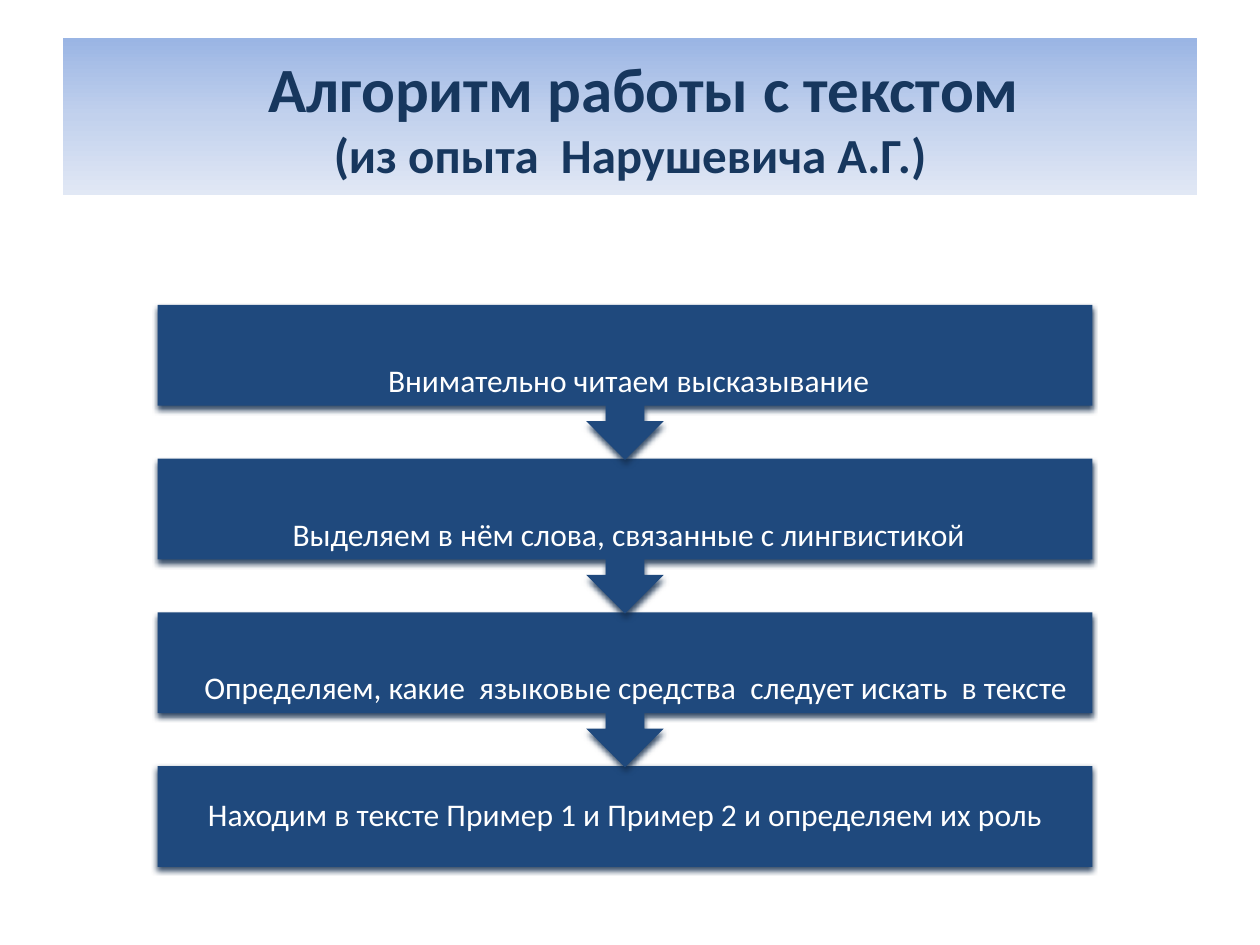
import pptx
import pptx.dml.color
import pptx.enum.dml
import pptx.enum.shapes
import pptx.enum.text
import pptx.oxml
import pptx.oxml.ns
import pptx.util
import copy

SHAPES = pptx.enum.shapes.MSO_SHAPE
STEPS = [
    # wording, first-line indent in grid cells
    ("Внимательно читаем высказывание", 0.6),
    ("Выделяем в нём слова, связанные с лингвистикой", 0.6),
    ("Определяем, какие  языковые средства  следует искать  в тексте", 1.7),
    ("Находим в тексте Пример 1 и Пример 2 и определяем их роль", 0),
]
LEFT, WIDTH, TOP = 12.5, 74.2, 24.2
PITCH, CALLOUT_HEIGHT, BOX_HEIGHT = 12.2, 12.3, 8


def color(hex_value):
    return pptx.dml.color.RGBColor.from_string(hex_value)


def cells(count):
    """Length of grid cells: the slide is 100 columns by 75 rows."""
    return pptx.util.Inches(count / 10)


class SlideBuilder:
    font = "Calibri"
    navy, white, title_color = "1F497D", "FFFFFF", "17375E"
    title_gradient = [(0, "9AB5E4"), (0.5, "C2D1ED"), (1, "E1E8F5")]

    def __init__(self, deck):
        self.slide = deck.slides.add_slide(deck.slide_layouts[6])

    def shape(self, kind, area):
        shape = self.slide.shapes.add_shape(kind, *map(cells, area))
        shape.shadow.inherit = False
        shape.line.fill.background()
        return shape

    def centered(self, frame, indent):
        frame.word_wrap = True
        frame.vertical_anchor = pptx.enum.text.MSO_ANCHOR.MIDDLE
        para = frame.paragraphs[0]
        para.alignment = pptx.enum.text.PP_ALIGN.CENTER
        properties = para._p.get_or_add_pPr()
        properties.set("marL", "0")
        properties.set("indent", str(cells(indent)))
        return para

    def run(self, para, text, size, text_color, bold=False):
        span = para.add_run()
        span.text = text
        span.font.name = self.font
        span.font.size = pptx.util.Pt(size)
        span.font.bold = bold
        span.font.color.rgb = color(text_color)

    def title(self, area, heading, subheading):
        banner = self.shape(SHAPES.RECTANGLE, area)
        banner.fill.gradient()
        banner.fill.gradient_angle = 270
        stop_list = banner._element.spPr.find(".//" + pptx.oxml.ns.qn("a:gsLst"))
        stop_list.insert(1, copy.deepcopy(stop_list[0]))
        for stop, (position, hex_value) in zip(banner.fill.gradient_stops, self.title_gradient):
            stop.position = position
            stop.color.rgb = color(hex_value)
        para = self.centered(banner.text_frame, 2.2)
        self.run(para, heading, 36, self.title_color, True)
        para.add_line_break()
        self.run(para, subheading, 28, self.title_color, True)

    def add_shadow(self, shape):
        effects = shape._element.spPr.find(pptx.oxml.ns.qn("a:effectLst"))
        effects.append(pptx.oxml.parse_xml(
            f'<a:outerShdw {pptx.oxml.ns.nsdecls("a")} blurRad="40000" dist="23000" '
            'dir="5400000" rotWithShape="0"><a:srgbClr val="132D4D">'
            '<a:alpha val="83000"/></a:srgbClr></a:outerShdw>'))

    def step(self, kind, area, rotation, text, indent):
        box = self.shape(kind, area)
        box.rotation = rotation
        box.fill.solid()
        box.fill.fore_color.rgb = color(self.navy)
        self.add_shadow(box)
        # The label is separate so that it stays upright over a turned callout.
        frame = self.slide.shapes.add_textbox(*map(cells, area)).text_frame
        for side in ("left", "top", "right", "bottom"):
            setattr(frame, f"margin_{side}", cells(1.4))
        para = self.centered(frame, indent)
        para.line_spacing = 0.9
        para.space_after = pptx.util.Pt(6.3)
        self.run(para, text, 18, self.white)


def main():
    deck = pptx.Presentation()
    deck.slide_width, deck.slide_height = cells(100), cells(75)
    builder = SlideBuilder(deck)
    builder.title((5, 3, 90, 12.5), "Алгоритм работы с текстом",
                  "(из опыта  Нарушевича А.Г.)")
    # Later steps go first, so each arrow tip lies over the next box.
    for index, (text, indent) in reversed(list(enumerate(STEPS))):
        last = index == len(STEPS) - 1
        kind = SHAPES.RECTANGLE if last else SHAPES.UP_ARROW_CALLOUT
        height = BOX_HEIGHT if last else CALLOUT_HEIGHT
        area = (LEFT, TOP + index * PITCH, WIDTH, height)
        builder.step(kind, area, 0 if last else 180, text, indent)
    deck.save("out.pptx")


if __name__ == "__main__":
    main()
